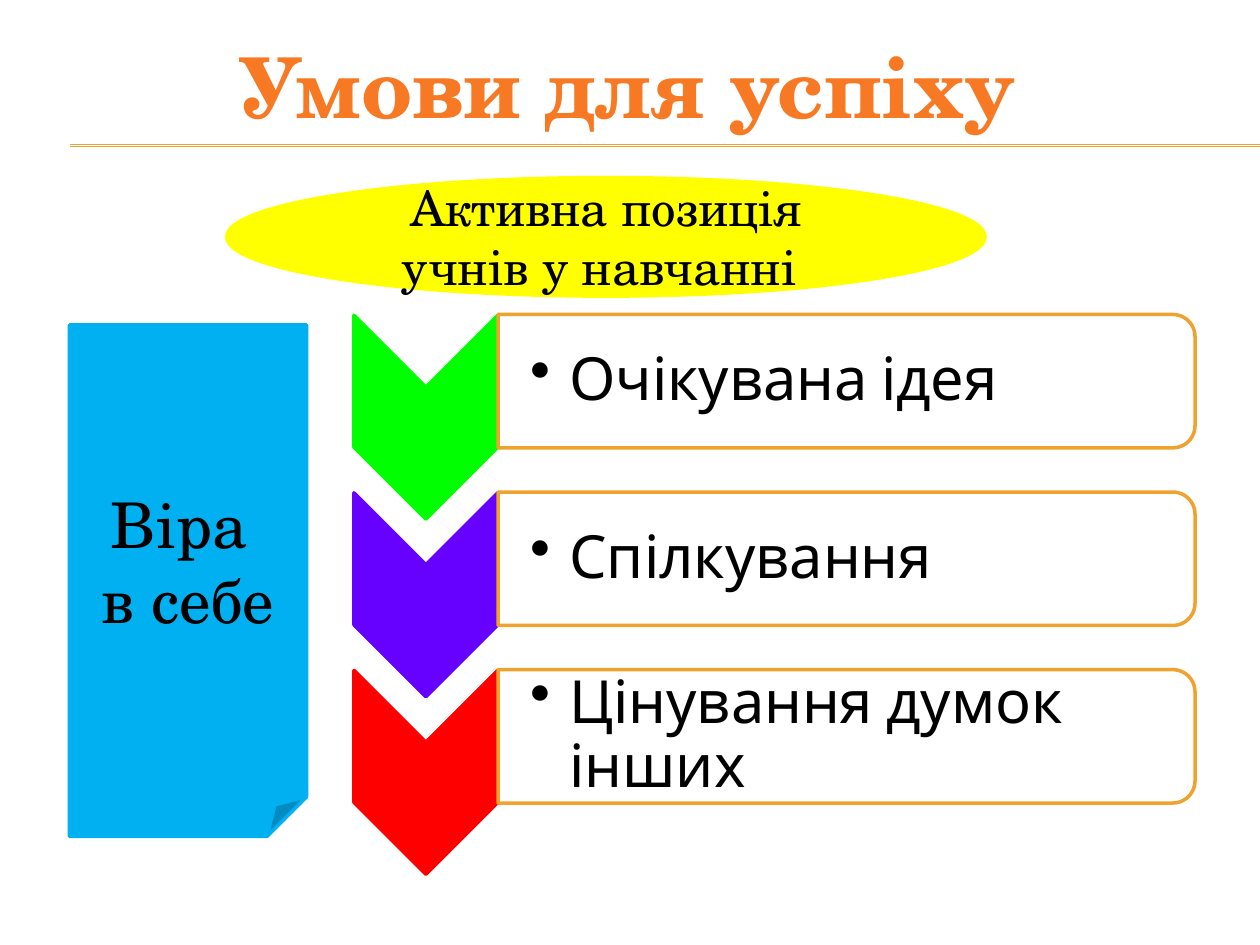
"""Build the slide on the conditions for success in learning."""
from lxml import etree
from pptx import Presentation
from pptx.dml.color import RGBColor
from pptx.enum.shapes import MSO_CONNECTOR, MSO_SHAPE
from pptx.enum.text import MSO_ANCHOR, PP_ALIGN
from pptx.oxml.ns import qn
from pptx.util import Cm, Pt

BLACK = RGBColor(0x00, 0x00, 0x00)
WHITE = RGBColor(0xFF, 0xFF, 0xFF)
AMBER = RGBColor(0xF0, 0xA2, 0x2E)
ORANGE = RGBColor(0xF8, 0x79, 0x24)
YELLOW = RGBColor(0xFF, 0xFF, 0x00)
BLUE = RGBColor(0x00, 0xB0, 0xF0)
GREEN = RGBColor(0x00, 0xFF, 0x00)
VIOLET = RGBColor(0x66, 0x00, 0xFF)
RED = RGBColor(0xFF, 0x00, 0x00)
SERIF = "TeX Gyre Schola"
SANS = "Cabin"

presentation = Presentation()
presentation.slide_width, presentation.slide_height = Cm(25.4), Cm(19.05)
slide = presentation.slides.add_slide(presentation.slide_layouts[6])


def write(holder, text, size, font=SERIF, color=BLACK, bold=False,
          align=PP_ALIGN.CENTER, anchor=MSO_ANCHOR.MIDDLE, bullet=None):
    frame = holder.text_frame
    frame.word_wrap = True
    frame.vertical_anchor = anchor
    frame.text = text
    for paragraph in frame.paragraphs:
        paragraph.alignment = align
        paragraph.font.size = Pt(size)
        paragraph.font.name = font
        paragraph.font.bold = bold
        paragraph.font.color.rgb = color
        if bullet:
            paragraph.line_spacing = 0.9
            paragraph.space_after = Pt(5)
            properties = paragraph._p.get_or_add_pPr()
            properties.set("marL", str(Cm(0.79)))
            properties.set("indent", str(Cm(-0.79)))
            mark = etree.Element(qn("a:buChar"), char=bullet)
            properties.insert_element_before(mark, "a:tabLst", "a:defRPr", "a:extLst")


def draw(preset, left, top, width, height, fill, outline, rotation=0):
    shape = slide.shapes.add_shape(preset, Cm(left), Cm(top), Cm(width), Cm(height))
    shape.rotation = rotation
    shape.shadow.inherit = False
    shape.fill.solid()
    shape.fill.fore_color.rgb = fill
    shape.line.color.rgb = outline
    shape.line.width = Pt(2)
    return shape


for height in (2.92, 2.95):
    rule = slide.shapes.add_connector(
        MSO_CONNECTOR.STRAIGHT, Cm(1.42), Cm(height), Cm(25.4), Cm(height))
    rule.line.color.rgb = AMBER
    rule.line.width = Pt(0.75)
    etree.SubElement(rule._element.spPr, qn("a:effectLst"))

conditions = [
    ("Очікувана ідея", GREEN),
    ("Спілкування", VIOLET),
    ("Цінування думок інших", RED),
]
for row, (condition, color) in enumerate(conditions):
    offset = row * 3.58
    draw(MSO_SHAPE.CHEVRON, 6.53, 6.96 + offset, 4.11, 2.9, color, color, 90)
    panel = draw(MSO_SHAPE.ROUND_2_SAME_RECTANGLE, 15.72, 0.66 + offset, 2.69, 14.05,
                 WHITE, AMBER, 90)
    panel_color = panel._element.spPr.find(qn("a:solidFill"))[0]
    etree.SubElement(panel_color, qn("a:alpha"), val="90000")
    label = slide.shapes.add_textbox(Cm(10.03), Cm(6.48 + offset), Cm(13.92), Cm(2.41))
    label.text_frame.margin_left = Cm(0.66)
    label.text_frame.margin_right = Cm(0.05)
    label.text_frame.margin_top = label.text_frame.margin_bottom = Cm(0.05)
    write(label, condition, 34, font=SANS, align=PP_ALIGN.LEFT, bullet="•")

active_position = draw(MSO_SHAPE.OVAL, 4.57, 3.58, 15.29, 2.39, YELLOW, YELLOW)
write(active_position, "Активна позиція учнів у навчанні ", 28)

self_belief = draw(MSO_SHAPE.FOLDED_CORNER, 1.4, 6.55, 4.78, 10.31, BLUE, BLUE)
write(self_belief, "Віра \nв себе", 36)

title = slide.shapes.add_textbox(Cm(4.57), Cm(0.58), Cm(16.87), Cm(2.31))
write(title, "Умови для успіху", 48, color=ORANGE, bold=True,
      align=PP_ALIGN.LEFT, anchor=MSO_ANCHOR.TOP)

presentation.save("out.pptx")
